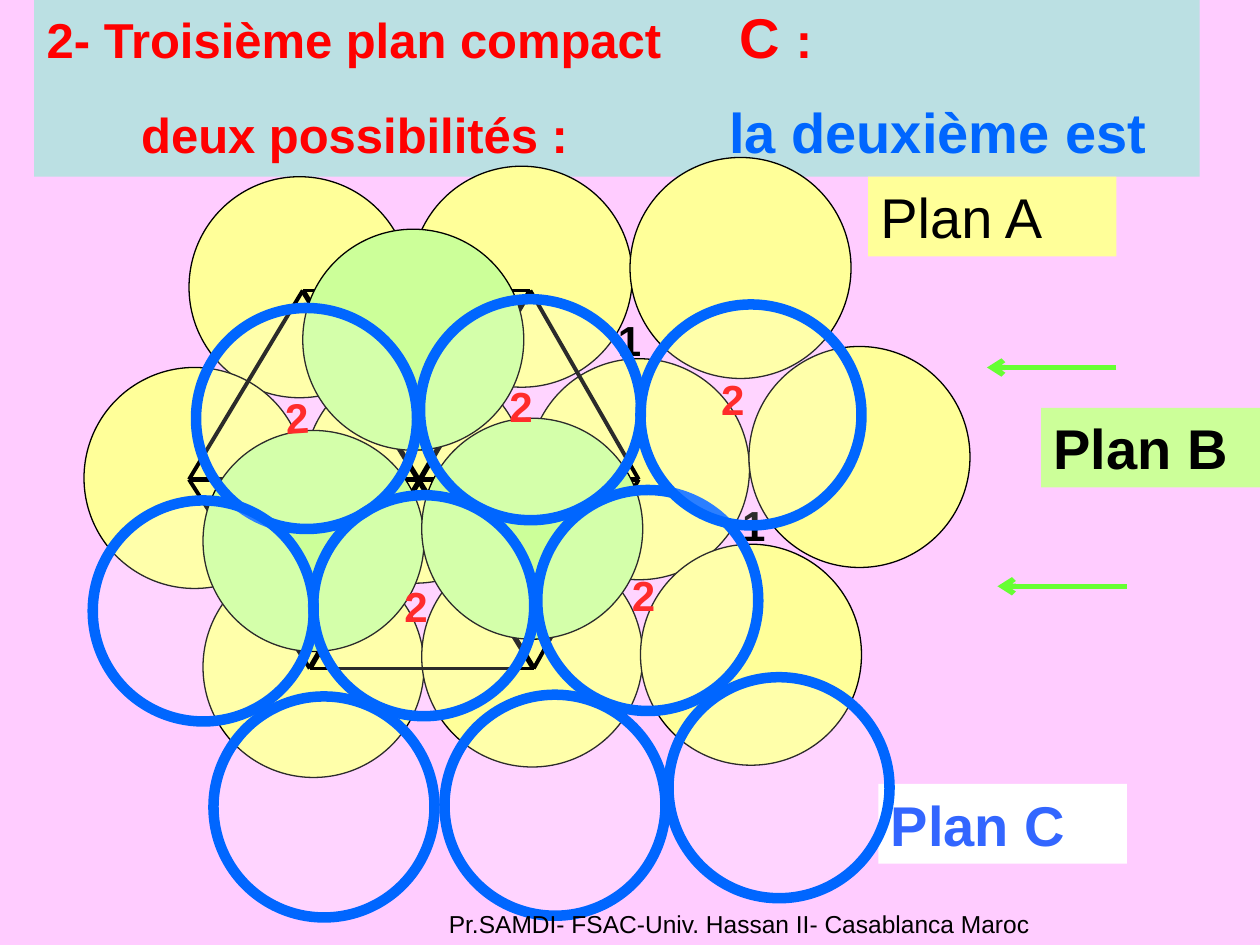
from itertools import pairwise
from lxml import etree
from pptx import Presentation
from pptx.dml.color import RGBColor
from pptx.enum import shapes, text
from pptx.oxml import ns
from pptx.util import Pt

PINK = RGBColor(0xFF, 0xCC, 0xFF)
TEAL = RGBColor(0xBB, 0xE0, 0xE3)
YELLOW = RGBColor(0xFF, 0xFF, 0x99)
GREEN = RGBColor(0xCC, 0xFF, 0x99)
ARROW_GREEN = RGBColor(0x66, 0xFF, 0x33)
WHITE = RGBColor(0xFF, 0xFF, 0xFF)
BLACK = RGBColor(0, 0, 0)
RED = RGBColor(0xFF, 0, 0)
BLUE = RGBColor(0, 0x66, 0xFF)
LABEL_BLUE = RGBColor(0x33, 0x66, 0xFF)

DIAMETER = 126.3
PLANE_A = [(60, 11), (126, 117), (187, 5), (254, 115), (0, 120),
           (68, 228), (193, 222), (318, 221), (380, 108), (312, 0)]
PLANE_B = [(57, 0), (0, 115), (125, 108)]
PLANE_C = [(59, 5), (126, 112), (187, 0), (254, 109), (0, 115),
           (69, 227), (201, 226), (329, 216), (313, 3)]
SITES_1 = [(63, 2, -3.6), (131, 109, -3.4), (0, 114, 0), (189, 0, 0), (260, 106, 0)]
SITES_2 = [(128, 4, 0), (68, 118, 0), (0, 10, -3.6), (249, 0, 0), (198, 112, 0)]


def sub(parent, tag, **attrs):
    return etree.SubElement(parent, ns.qn(tag), attrs)


def style(r, size, color, bold=False):
    r.font.name = "Arial"
    r.font.size = Pt(size)
    r.font.bold = bold
    r.font.color.rgb = color


def add_title(s, x, y, w, h):
    sp = s.shapes.title
    sp.left, sp.top, sp.width, sp.height = Pt(x), Pt(y), Pt(w), Pt(h)
    sp.fill.solid()
    sp.fill.fore_color.rgb = TEAL
    tf = sp.text_frame
    tf.auto_size = text.MSO_AUTO_SIZE.NONE
    tf.vertical_anchor = text.MSO_ANCHOR.TOP
    lines = [
        ([396], [("2- Troisième plan compact\t", 28, RED), ("C ", 32, RED), (":", 28, RED)]),
        ([54, 390], [("\tdeux possibilités :\t", 28, RED), ("la deuxième est", 32, BLUE)]),
    ]
    for i, (stops, runs) in enumerate(lines):
        p = tf.add_paragraph() if i else tf.paragraphs[0]
        p.alignment = text.PP_ALIGN.LEFT
        p.space_before = Pt(16 * i)
        tabs = sub(p._p.get_or_add_pPr(), "a:tabLst")
        for stop in stops:
            sub(tabs, "a:tab", pos=str(Pt(stop)), algn="l")
        for words, size, color in runs:
            r = p.add_run()
            r.text = words
            style(r, size, color, True)


def add_label(parent, x, y, w, h, words, size, color, bold=False, fill=None, angle=0):
    sp = parent.add_textbox(Pt(x), Pt(y), Pt(w), Pt(h))
    sp.rotation = angle
    if fill is not None:
        sp.fill.solid()
        sp.fill.fore_color.rgb = fill
    tf = sp.text_frame
    tf.word_wrap = True
    tf.text = words
    style(tf.paragraphs[0].runs[0], size, color, bold)
    return sp


def add_plane(s, x, y, centres, fill, line, width, opacity=None):
    grp = s.shapes.add_group_shape()
    for dx, dy in centres:
        sp = grp.shapes.add_shape(shapes.MSO_SHAPE.OVAL, Pt(x + dx), Pt(y + dy),
                                  Pt(DIAMETER), Pt(DIAMETER))
        sp.shadow.inherit = False
        sp.rotation = 28.7
        sp.fill.solid()
        sp.fill.fore_color.rgb = fill
        sp.line.color.rgb = line
        sp.line.width = Pt(width)
        if opacity:
            color = sp.fill._xPr.find(".//" + ns.qn("a:srgbClr"))
            sub(color, "a:alpha", val=str(opacity * 1000))


def add_sites(s, x, y, sites, words, color):
    grp = s.shapes.add_group_shape()
    for dx, dy, angle in sites:
        add_label(grp.shapes, x + dx, y + dy, 42, 36, words, 24, color, True, angle=angle)


def add_line(parent, start, end, color, width, arrow=False):
    cx = parent.add_connector(shapes.MSO_CONNECTOR.STRAIGHT, *map(Pt, start + end))
    cx.line.color.rgb = color
    cx.line.width = Pt(width)
    if arrow:
        sub(cx.line._get_or_add_ln(), "a:tailEnd", type="arrow")
    sub(cx._element.spPr, "a:effectLst")


def add_hexagon(s, x, y, w, h):
    corners = [(x + 65, y), (x + 195, y), (x + w, y + h / 2),
               (x + 197, y + h), (x + 69, y + h), (x, y + h / 2)]
    for start, end in pairwise(corners + corners[:1]):
        add_line(s.shapes, start, end, BLACK, 2.25)
    for start, end in zip(corners[:3], corners[3:]):
        add_line(s.shapes, start, end, BLACK, 3)


def add_plan_b(s, x, y):
    grp = s.shapes.add_group_shape()
    add_label(grp.shapes, x + 31, y + 23, 142, 45.5, "Plan B", 32, BLACK, True, GREEN)
    for dx, dy in [(0, 0), (6, 125)]:
        add_line(grp.shapes, (x + dx + 74, y + dy), (x + dx, y + dy), ARROW_GREEN, 3, True)


def main():
    prs = Presentation()
    prs.slide_width, prs.slide_height = Pt(720), Pt(540)
    s = prs.slides.add_slide(prs.slide_layouts[5])
    s.background.fill.solid()
    s.background.fill.fore_color.rgb = PINK

    add_title(s, 19.5, -2, 666, 103)
    add_label(s.shapes, 496, 101, 142, 45.5, "Plan A", 32, BLACK, fill=YELLOW)
    add_plane(s, 48, 90, PLANE_A, YELLOW, BLACK, 0.75)
    add_sites(s, 157, 176, SITES_1, "1", BLACK)
    add_hexagon(s, 108, 166, 257, 216)
    add_plan_b(s, 564, 210)
    add_label(s.shapes, 502, 448, 142, 45.5, "Plan C", 32, LABEL_BLUE, True, WHITE)
    add_plane(s, 116, 131, PLANE_B, GREEN, BLACK, 0.75)
    add_sites(s, 156, 210, SITES_2, "2", RED)
    add_plane(s, 53, 171, PLANE_C, WHITE, BLUE, 6, 17)
    footer = add_label(s.shapes, 236, 516, 373, 37, 
                       "Pr.SAMDI- FSAC-Univ. Hassan II- Casablanca Maroc", 14, BLACK)
    footer.text_frame.paragraphs[0].alignment = text.PP_ALIGN.CENTER
    prs.save("out.pptx")


if __name__ == "__main__":
    main()
